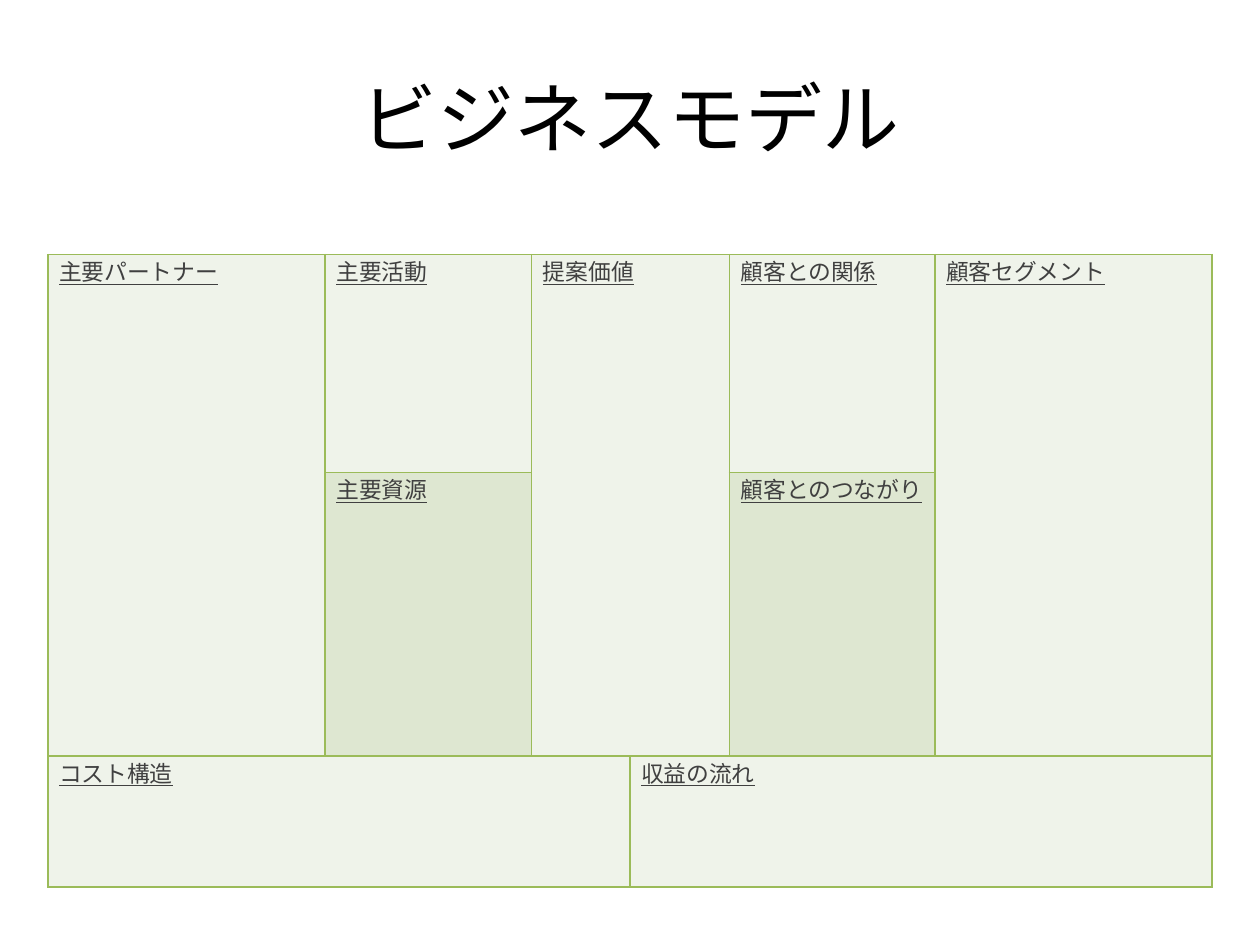
from lxml.etree import SubElement
from pptx import Presentation
from pptx.dml.color import RGBColor
from pptx.enum.text import MSO_ANCHOR as Anchor, PP_ALIGN as Align
from pptx.oxml.ns import qn
from pptx.util import Inches, Pt

TITLE = "ビジネスモデル"
FONT = "Calibri"
LIGHT, DARK, GREEN = "EFF3EA", "DEE7D1", "9BBB59"
COLS = [2.2, 1.64, 0.78, 0.79, 1.63, 2.2]
ROWS = [1.73, 2.25, 1.04]
# label, row, column, rows spanned, columns spanned, fill
BLOCKS = [
    ("主要パートナー", 0, 0, 2, 1, LIGHT),
    ("主要活動", 0, 1, 1, 1, LIGHT),
    ("提案価値", 0, 2, 2, 2, LIGHT),
    ("顧客との関係", 0, 4, 1, 1, LIGHT),
    ("顧客セグメント", 0, 5, 2, 1, LIGHT),
    ("主要資源", 1, 1, 1, 1, DARK),
    ("顧客とのつながり", 1, 4, 1, 1, DARK),
    ("コスト構造", 2, 0, 1, 3, LIGHT),
    ("収益の流れ", 2, 3, 1, 3, LIGHT),
]


def style(para, size, color, align, under=None):
    para.alignment = align
    for run in para.runs:
        font = run.font
        font.name, font.size, font.underline = FONT, Pt(size), under
        font.color.rgb = RGBColor.from_string(color)


def border(cell, color, width):
    props = cell._tc.get_or_add_tcPr()
    for side in ("lnL", "lnR", "lnT", "lnB"):
        line = SubElement(props, qn(f"a:{side}"), w=str(Pt(width)))
        fill = SubElement(line, qn("a:solidFill"))
        SubElement(fill, qn("a:srgbClr"), val=color)


def add_title(slide):
    title = slide.shapes.title
    title.left, title.top = Inches(0.5), Inches(0.3)
    title.width, title.height = Inches(9), Inches(1.25)
    frame = title.text_frame
    frame.text = TITLE
    frame.vertical_anchor = Anchor.MIDDLE
    style(frame.paragraphs[0], 44, "000000", Align.CENTER)


def add_canvas(slide):
    table = slide.shapes.add_table(
        len(ROWS), len(COLS), Inches(0.38), Inches(2.02),
        Inches(sum(COLS)), Inches(sum(ROWS))).table
    table.first_row = table.horz_banding = False
    for col, width in zip(table.columns, COLS):
        col.width = Inches(width)
    for row, height in zip(table.rows, ROWS):
        row.height = Inches(height)
    for cell in table.iter_cells():
        border(cell, GREEN, 1)

    for label, top, left, down, across, color in BLOCKS:
        cell = table.cell(top, left)
        if down * across > 1:
            cell.merge(table.cell(top + down - 1, left + across - 1))
        for r in range(top, top + down):
            for c in range(left, left + across):
                fill = table.cell(r, c).fill
                fill.solid()
                fill.fore_color.rgb = RGBColor.from_string(color)
        cell.margin_left = cell.margin_right = Inches(0.09)
        cell.margin_top = cell.margin_bottom = 0
        cell.vertical_anchor = Anchor.TOP
        cell.text_frame.text = label
        style(cell.text_frame.paragraphs[0], 13, "404040", Align.JUSTIFY, True)


def main():
    deck = Presentation()
    deck.slide_width, deck.slide_height = Inches(10), Inches(7.5)
    slide = deck.slides.add_slide(deck.slide_layouts[5])
    add_title(slide)
    add_canvas(slide)
    deck.save("out.pptx")


if __name__ == "__main__":
    main()
